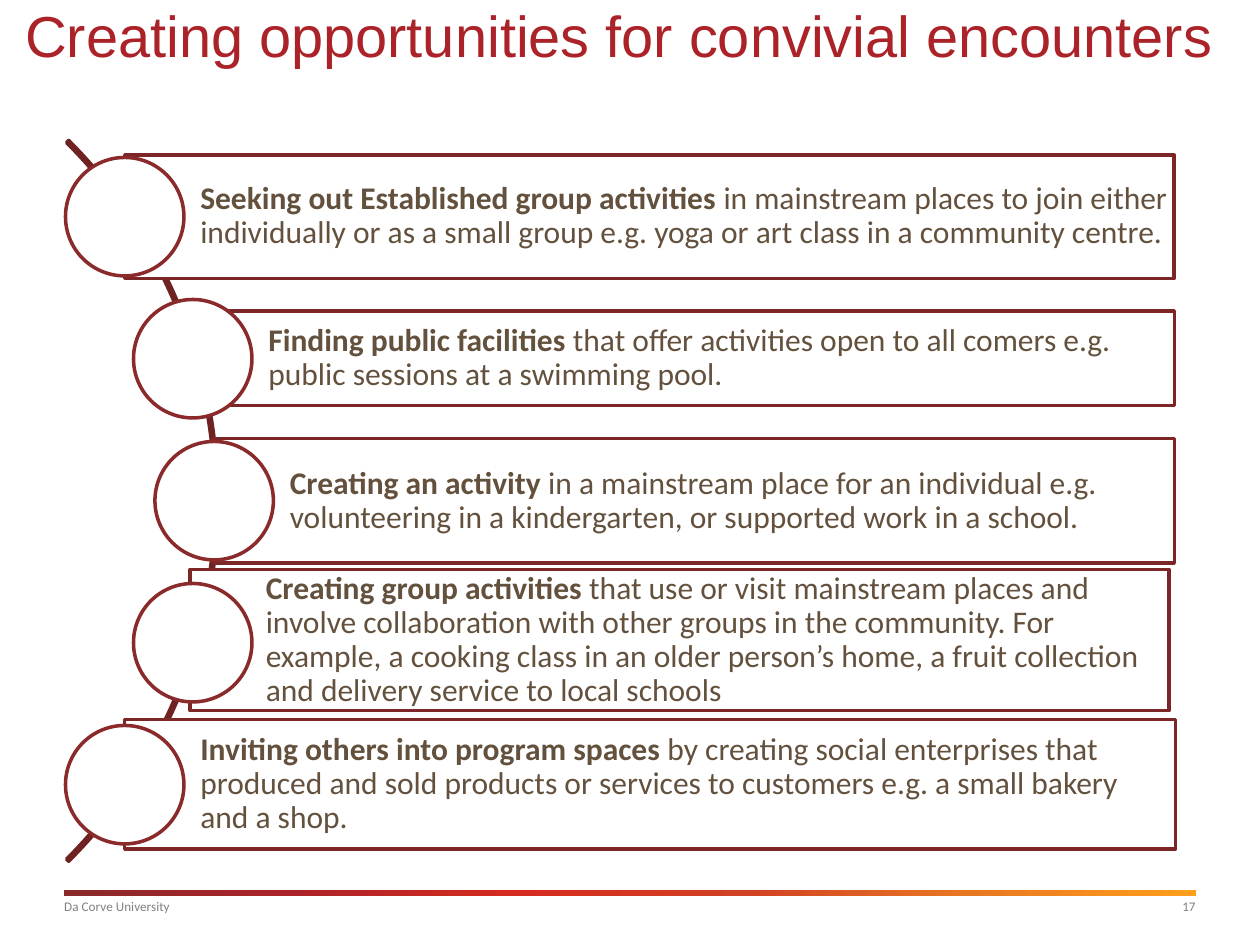
from lxml import etree
from pptx import Presentation
from pptx.dml.color import RGBColor
from pptx.enum.shapes import MSO_SHAPE as Preset
from pptx.enum.text import MSO_ANCHOR as Anchor, MSO_AUTO_SIZE as AutoSize, PP_ALIGN as Align
from pptx.oxml.ns import qn
from pptx.util import Inches, Pt

WHITE = RGBColor(0xFF, 0xFF, 0xFF)
TITLE_RED = RGBColor(0xAB, 0x23, 0x28)
ARC_RED = RGBColor(0x6F, 0x22, 0x22)
BOX_RED = RGBColor(0x7D, 0x26, 0x27)
CIRCLE_RED = RGBColor(0x8A, 0x2A, 0x2B)
BROWN = RGBColor(0x63, 0x51, 0x3D)
GREY = RGBColor(0x80, 0x80, 0x80)
BAR_COLORS = [CIRCLE_RED, TITLE_RED, RGBColor(0xD5, 0x2B, 0x1E), RGBColor(0xD1, 0x41, 0x24),
              RGBColor(0xE8, 0x77, 0x22), RGBColor(0xFF, 0x9E, 0x1B)]

CIRCLE_SIZE = 0.94
FIRST_CIRCLE_TOP = 1.25
CIRCLE_STEP = 1.127

# Circle left, box (left, top, width, height), bold lead, rest of the text
ENCOUNTERS = [
    (0.52, (0.99, 1.23, 8.33, 0.98), "Seeking out Established group activities ",
     "in mainstream places to join either individually or as a small group "
     "e.g. yoga or art class in a community centre."),
    (1.06, (1.53, 2.47, 7.79, 0.75), "Finding public facilities",
     " that offer activities open to all comers e.g. public sessions at a swimming pool."),
    (1.23, (1.7, 3.48, 7.62, 0.99), "Creating an activity ",
     "in a mainstream place for an individual e.g. volunteering in a kindergarten, "
     "or supported work in a school."),
    (1.06, (1.51, 4.52, 7.77, 1.12), "Creating group activities ",
     "that use or visit mainstream places and involve collaboration with other groups "
     "in the community. For example, a cooking class in an older person’s home, "
     "a fruit collection and delivery service to local schools"),
    (0.52, (0.99, 5.71, 8.34, 1.03), "Inviting others into program spaces ",
     "by creating social enterprises that produced and sold products or services "
     "to customers e.g. a small bakery and a shop."),
]


def write_text(shape, runs, size, color, font="Calibri", align=Align.LEFT,
               anchor=Anchor.TOP, insets=(0, 0, 0, 0), line_spacing=None):
    """Fill a shape with one paragraph of (text, bold) runs."""
    frame = shape.text_frame
    frame.word_wrap = True
    frame.auto_size = AutoSize.NONE
    frame.vertical_anchor = anchor
    (frame.margin_left, frame.margin_top,
     frame.margin_right, frame.margin_bottom) = map(Inches, insets)
    paragraph = frame.paragraphs[0]
    paragraph.alignment = align
    paragraph.line_spacing = line_spacing
    for text, bold in runs:
        run = paragraph.add_run()
        run.text = text
        run.font.name = font
        run.font.size = Pt(size)
        run.font.bold = bold
        run.font.color.rgb = color


def add_outlined(slide, preset, box, line_color, fill_color=None):
    shape = slide.shapes.add_shape(preset, *map(Inches, box))
    shape.shadow.inherit = False
    if fill_color is None:
        shape.fill.background()
    else:
        shape.fill.solid()
        shape.fill.fore_color.rgb = fill_color
    shape.line.color.rgb = line_color
    shape.line.width = Pt(2)
    return shape


def add_title(slide, box):
    title = slide.shapes.title
    title.left, title.top, title.width, title.height = map(Inches, box)
    write_text(title, [("Creating opportunities for convivial encounters", False)],
               size=33, color=TITLE_RED, font="Arial")


def add_encounters(slide, arc_box):
    # Arc behind the circles, from 315 to 45 degrees
    arc = add_outlined(slide, Preset.BLOCK_ARC, arc_box, ARC_RED)
    for index, value in enumerate((189, 27, 0.003)):
        arc.adjustments[index] = value

    # Text boxes, each with its circle
    for index, (circle_left, box, lead, rest) in enumerate(ENCOUNTERS):
        rectangle = add_outlined(slide, Preset.RECTANGLE, box, BOX_RED, WHITE)
        write_text(rectangle, [(lead, True), (rest, False)], size=18, color=BROWN,
                   anchor=Anchor.MIDDLE, insets=(0.6, 0.05, 0.04, 0.05), line_spacing=0.9)
        circle_top = FIRST_CIRCLE_TOP + index * CIRCLE_STEP
        add_outlined(slide, Preset.OVAL, (circle_left, circle_top, CIRCLE_SIZE, CIRCLE_SIZE),
                     CIRCLE_RED, WHITE)


def add_footer(slide, left, top, width):
    # Gradient bar
    bar = slide.shapes.add_shape(Preset.RECTANGLE, Inches(left), Inches(top),
                                 Inches(width), Inches(0.05))
    bar.shadow.inherit = False
    bar.line.fill.background()
    bar.fill.gradient()
    bar.fill.gradient_angle = 0
    stops = next(bar.element.iter(qn("a:gsLst")))
    for stop in list(stops):
        stops.remove(stop)
    for index, color in enumerate(BAR_COLORS):
        stop = etree.SubElement(stops, qn("a:gs"), pos=str(index * 20000))
        etree.SubElement(stop, qn("a:srgbClr"), val=str(color))

    # Name at the left, page number at the right
    number_width = 0.86
    labels = [("Da Corve University", left, width - number_width - 0.05, Align.LEFT),
              ("17", left + width - number_width, number_width, Align.RIGHT)]
    for text, label_left, label_width, align in labels:
        label = slide.shapes.add_textbox(Inches(label_left), Inches(top + 0.03),
                                         Inches(label_width), Inches(0.4))
        write_text(label, [(text, False)], size=7.5, color=GREY, align=align,
                   insets=(0, 0.04, 0, 0))


def main():
    presentation = Presentation()
    presentation.slide_width = Inches(10)
    presentation.slide_height = Inches(7.5)
    slide = presentation.slides.add_slide(presentation.slide_layouts[5])
    add_footer(slide, 0.51, 7.06, 8.98)
    add_title(slide, (0.2, 0, 9.61, 0.69))
    add_encounters(slide, (-6.36, -0.07, 8.09, 8.09))
    presentation.save("out.pptx")


if __name__ == "__main__":
    main()
